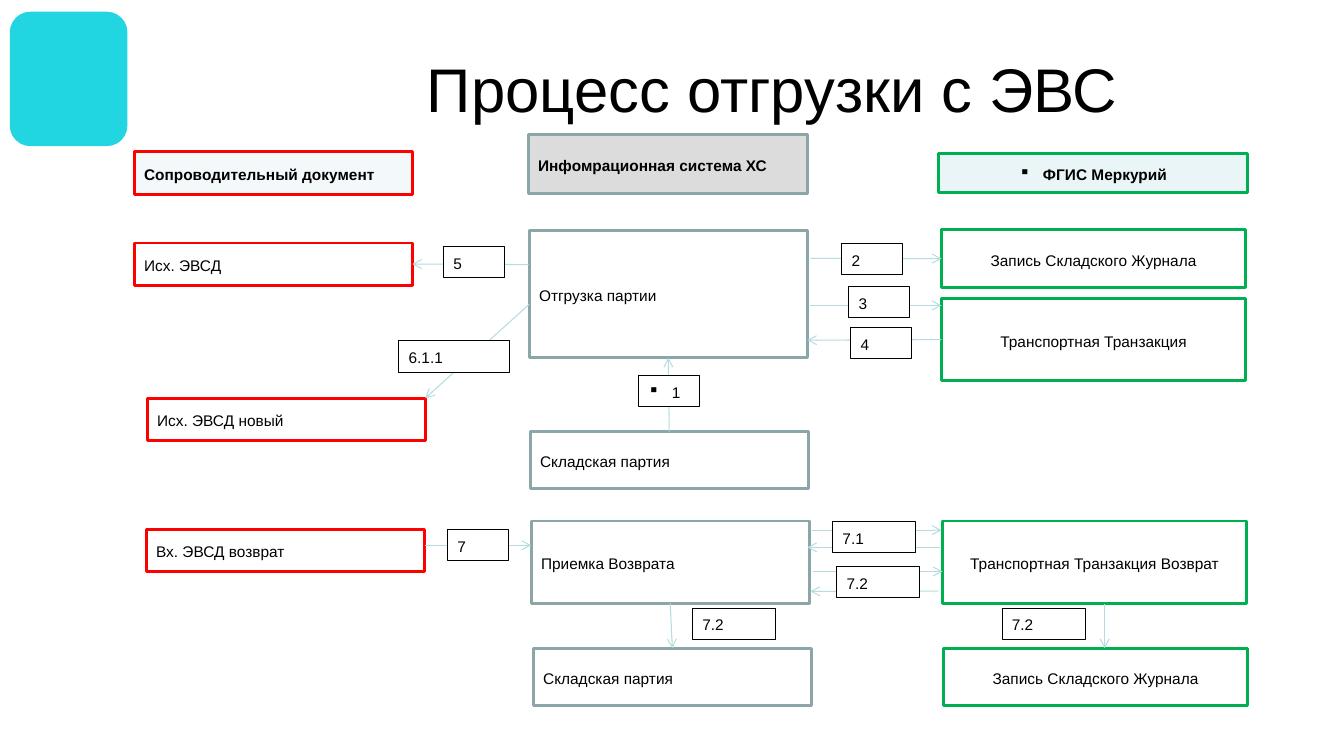
import pptx
import pptx.chart.data
import pptx.dml.color
import pptx.enum.shapes
import pptx.enum.text
import pptx.oxml.ns
import pptx.util
from lxml import etree

Pt = pptx.util.Pt
SHAPES = pptx.enum.shapes.MSO_SHAPE
ALIGN = pptx.enum.text.PP_ALIGN
ANCHOR = pptx.enum.text.MSO_ANCHOR

COLOURS = {
    "text": "000000", "paper": "FFFFFF", "arrow": "B6DCDF", "emblem": "21D6E0",
    "document": "FF0000", "system": "8AA6A8", "registry": "00B050",
    "document head": "DAEDEF", "system head": "808080", "registry head": "BBE0E3",
}
TITLE = ("Процесс отгрузки с ЭВС", 192.2, 18, 719.3, 90)
EMBLEM = (8, 9.4, 82, 94)
COLUMNS = {
    "document": {"width": 198.7, "align": ALIGN.LEFT},
    "system": {"width": 198.7, "align": ALIGN.LEFT},
    "registry": {"width": 217.4, "align": ALIGN.CENTER},
}
HEADS = [
    ("document", "Сопроводительный документ", 95.8, 108, 198.7, 31, 30, False),
    ("system", "Инфомрационная система ХС", 377.3, 95.8, 199.4, 42.5, 27, False),
    ("registry", "ФГИС Меркурий", 670.3, 109.4, 221, 28.1, 31, True),
]
BOXES = [
    ("outgoing", "document", "Исх. ЭВСД", 95.8, 173.5, 30.2),
    ("outgoing new", "document", "Исх. ЭВСД новый", 105.1, 284.4, 30.2),
    ("incoming return", "document", "Вх. ЭВСД возврат", 104.4, 378, 30.2),
    ("shipment", "system", "Отгрузка партии", 378, 164.9, 90.7),
    ("stock", "system", "Складская партия", 378.7, 308.2, 41),
    ("return intake", "system", "Приемка Возврата", 379.4, 372.2, 59),
    ("return stock", "system", "Складская партия", 380.9, 463, 41),
    ("journal", "registry", "Запись Складского Журнала", 672.5, 164.2, 41),
    ("transport", "registry", "Транспортная Транзакция", 672.5, 213.1, 59),
    ("transport return", "registry", "Транспортная Транзакция Возврат", 673.2, 372.2, 59),
    ("return journal", "registry", "Запись Складского Журнала", 673.9, 463, 41),
]
ARROWS = [
    (("stock", 0), ("shipment", 2)),
    ((578.9, 184.6), ("journal", 1)),
    ((578.9, 218.2), (672.5, 218.2)),
    (("transport", 1), (576.7, 243)),
    ((377.6, 189), ("outgoing", 3)),
    ((378, 217.4), (303.8, 284.4)),
    ((303.8, 389.5), (379.4, 389.5)),
    ((580.3, 378.7), (672.5, 378.7)),
    ((671.8, 391), (576.7, 391)),
    ((581, 408.2), (673.2, 408.2)),
    ((670.3, 422.2), (578.9, 422.4)),
    (("return intake", 2), ("return stock", 0)),
    ((789.1, 431.3), (789.1, 463)),
]
STEP_HEIGHT = 22.3
STEP_WIDTHS = {1: 43.5, 3: 59.4, 5: 79}
STEPS = [
    ("1", 455.8, 267.8, True), ("2", 601.2, 173.5, False),
    ("3", 606.2, 204.5, False), ("4", 607.7, 234, False),
    ("5", 316.8, 175.9, False), ("6.1.1", 284.8, 243.4, False),
    ("7", 319.7, 378, False), ("7.1", 594.7, 372.2, False),
    ("7.2", 597.6, 404.6, False), ("7.2", 715.7, 434.2, False),
    ("7.2", 494.6, 434.2, False),
]


def colour(name):
    """Return the named palette colour."""
    return pptx.dml.color.RGBColor.from_string(COLOURS[name])


def write(shape, text, align, anchor, size=11, bold=False, bullet=False, spacing=1.15):
    """Put one formatted paragraph into a shape."""
    frame = shape.text_frame
    frame.word_wrap = True
    frame.vertical_anchor = anchor
    para = frame.paragraphs[0]
    para.alignment = align
    para.line_spacing = spacing
    if bullet:
        properties = para._p.get_or_add_pPr()
        properties.set("marL", str(Pt(17)))
        properties.set("indent", str(-Pt(17)))
        mark = etree.SubElement(properties, pptx.oxml.ns.qn("a:buChar"))
        mark.set("char", "▪")
    span = para.add_run()
    span.text = text
    span.font.name = "Arial"
    span.font.size = Pt(size)
    span.font.bold = bold
    span.font.color.rgb = colour("text")


def add_box(page, bounds, line, weight, fill=None, opacity=100, kind=SHAPES.RECTANGLE):
    """Draw an outlined shape with an optional fill."""
    box = page.shapes.add_shape(kind, *map(Pt, bounds))
    box.shadow.inherit = False
    box.line.color.rgb = colour(line)
    box.line.width = Pt(weight)
    if fill is None:
        box.fill.background()
        return box
    box.fill.solid()
    box.fill.fore_color.rgb = colour(fill)
    if opacity < 100:
        tint = box._element.spPr.find(".//" + pptx.oxml.ns.qn("a:srgbClr"))
        etree.SubElement(tint, pptx.oxml.ns.qn("a:alpha")).set("val", str(opacity * 1000))
    return box


def add_arrow(page, start, end, boxes):
    """Draw an arrow between points or box sides."""
    points = [(0, 0) if isinstance(tip[0], str) else tip for tip in (start, end)]
    arrow = page.shapes.add_connector(
        pptx.enum.shapes.MSO_CONNECTOR.STRAIGHT, *(Pt(v) for point in points for v in point))
    for tip, connect in ((start, arrow.begin_connect), (end, arrow.end_connect)):
        if isinstance(tip[0], str):
            connect(boxes[tip[0]], tip[1])
    arrow.line.color.rgb = colour("arrow")
    arrow.line.width = Pt(0.75)
    etree.SubElement(arrow.line._get_or_add_ln(), pptx.oxml.ns.qn("a:tailEnd")).set("type", "arrow")
    etree.SubElement(arrow._element.spPr, pptx.oxml.ns.qn("a:effectLst"))


def main():
    """Build the shipment process slide."""
    deck = pptx.Presentation()
    deck.slide_width, deck.slide_height = Pt(960), Pt(540)
    page = deck.slides.add_slide(deck.slide_layouts[6])

    add_box(page, EMBLEM, "emblem", 2, "emblem", kind=SHAPES.ROUNDED_RECTANGLE)
    text, *bounds = TITLE
    title = page.shapes.add_textbox(*map(Pt, bounds))
    write(title, text, ALIGN.CENTER, ANCHOR.MIDDLE, size=44, spacing=1.0)

    boxes = {}
    for key, column, text, left, top, height in BOXES:
        style = COLUMNS[column]
        boxes[key] = add_box(page, (left, top, style["width"], height), column, 2)
        write(boxes[key], text, style["align"], ANCHOR.MIDDLE)

    for start, end in ARROWS:
        add_arrow(page, start, end, boxes)

    for text, left, top, bullet in STEPS:
        step = add_box(page, (left, top, STEP_WIDTHS[len(text)], STEP_HEIGHT), "text", 0.5, "paper")
        write(step, text, ALIGN.LEFT, ANCHOR.TOP, bullet=bullet)

    for column, text, left, top, width, height, opacity, bullet in HEADS:
        head = add_box(page, (left, top, width, height), column, 2, column + " head", opacity)
        write(head, text, COLUMNS[column]["align"], ANCHOR.MIDDLE, bold=True, bullet=bullet)

    deck.save("out.pptx")


if __name__ == "__main__":
    main()
